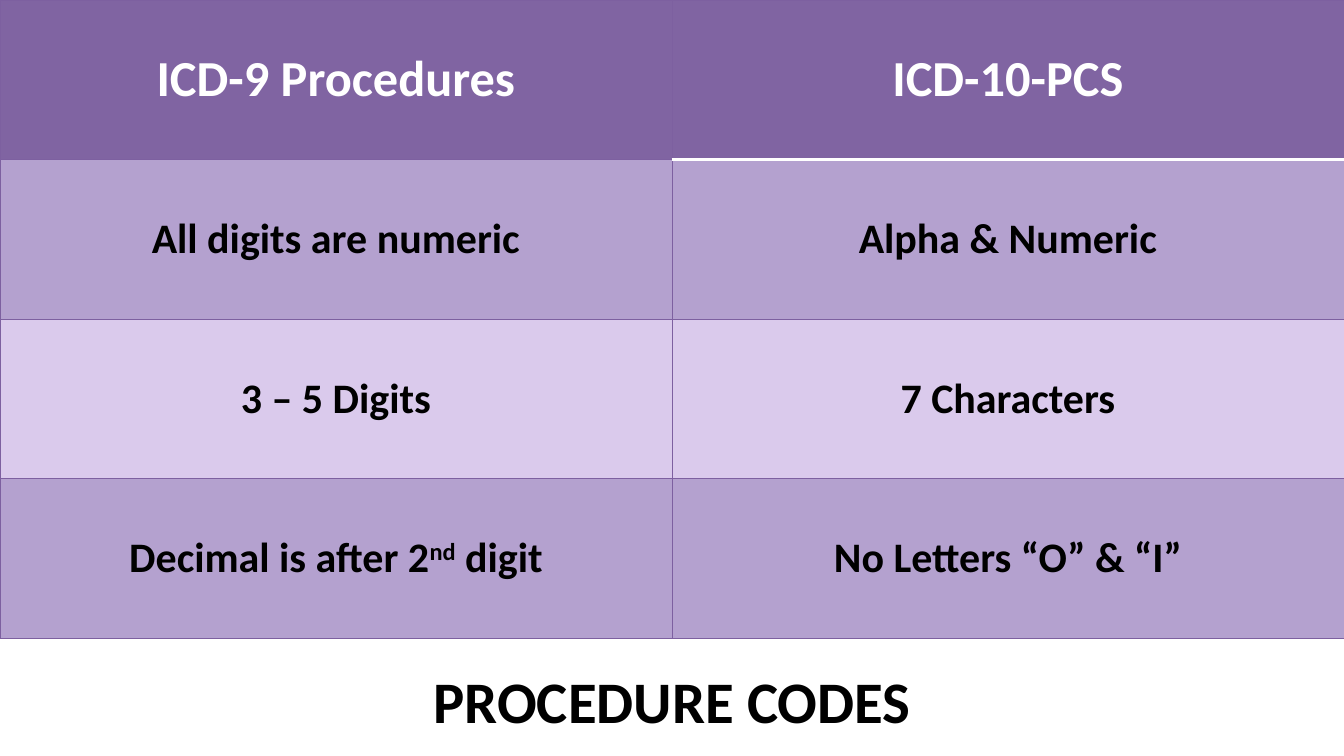
from dataclasses import dataclass

from lxml import etree
from pptx import Presentation
from pptx import util as u
from pptx.dml.color import RGBColor
from pptx.enum import text
from pptx.oxml.ns import qn


@dataclass(frozen=True)
class Theme:
    font: str = "Calibri"
    header: str = "8064A2"
    band: str = "B4A1CF"
    plain: str = "DACAEC"
    rule: str = "7D60A0"
    light: str = "FFFFFF"
    dark: str = "000000"
    title_size: int = 42
    header_size: int = 36
    body_size: int = 30
    rule_width: float = 0.75
    header_rule_width: float = 2


def write(frame, content, *, font, size, color, superscript=""):
    paragraph = frame.paragraphs[0]
    paragraph.alignment = text.PP_ALIGN.CENTER
    before, mark, after = content.partition(superscript) if superscript else (content, "", "")
    for piece in filter(None, (before, mark, after)):
        run = paragraph.add_run()
        run.text = piece
        run.font.name = font
        run.font.size = u.Pt(size)
        run.font.bold = True
        run.font.color.rgb = RGBColor.from_string(color)
        if piece == mark:
            run._r.get_or_add_rPr().set("baseline", "30000")


class CodeSlide:
    def __init__(self, deck, theme):
        self.theme = theme
        self.slide = deck.slides.add_slide(deck.slide_layouts[5])

    def title(self, content, left, top, width, height):
        heading = self.slide.shapes.title
        heading.left, heading.top = u.Cm(left), u.Cm(top)
        heading.width, heading.height = u.Cm(width), u.Cm(height)
        heading.text_frame.vertical_anchor = text.MSO_ANCHOR.TOP
        write(heading.text_frame, content, font=self.theme.font,
              size=self.theme.title_size, color=self.theme.dark)

    def border(self, cell, sides):
        properties = cell._tc.get_or_add_tcPr()
        for position, (side, (color, width)) in enumerate(sides.items()):
            line = etree.Element(qn(f"a:ln{side}"), w=str(int(u.Pt(width))))
            fill = etree.SubElement(line, qn("a:solidFill"))
            etree.SubElement(fill, qn("a:srgbClr"), val=color)
            properties.insert(position, line)

    def comparison(self, rows, left, top, width, height, superscript):
        theme = self.theme
        table = self.slide.shapes.add_table(
            len(rows), len(rows[0]), u.Cm(left), u.Cm(top), u.Cm(width), u.Cm(height)).table
        thin = (theme.rule, theme.rule_width)
        header_rule = (theme.light, theme.header_rule_width)
        for r, row in enumerate(rows):
            for c, content in enumerate(row):
                cell = table.cell(r, c)
                cell.vertical_anchor = text.MSO_ANCHOR.MIDDLE
                cell.margin_left = cell.margin_right = u.Cm(0.18)
                cell.margin_top = cell.margin_bottom = 0
                background = theme.header if r == 0 else theme.band if r % 2 else theme.plain
                cell.fill.solid()
                cell.fill.fore_color.rgb = RGBColor.from_string(background)
                write(cell.text_frame, content, font=theme.font,
                      size=theme.body_size if r else theme.header_size,
                      color=theme.dark if r else theme.light,
                      superscript=superscript if superscript in content else "")
                sides = dict.fromkeys("LRTB", thin)
                if c == 1 and r < 2:
                    sides["T" if r else "B"] = header_rule
                self.border(cell, sides)


def main():
    deck = Presentation()
    deck.slide_width, deck.slide_height = u.Cm(33.87), u.Cm(19.05)
    page = CodeSlide(deck, Theme())
    procedure_codes = [
        ("ICD-9 Procedures", "ICD-10-PCS"),
        ("All digits are numeric", "Alpha & Numeric"),
        ("3 – 5 Digits", "7 Characters"),
        ("Decimal is after 2nd digit", "No Letters “O” & “I”"),
    ]
    page.comparison(procedure_codes, 0, 0, 33.87, 16.08, superscript="nd")
    page.title("PROCEDURE CODES", 0, 16.61, 33.87, 2.06)
    deck.save("out.pptx")


if __name__ == "__main__":
    main()
